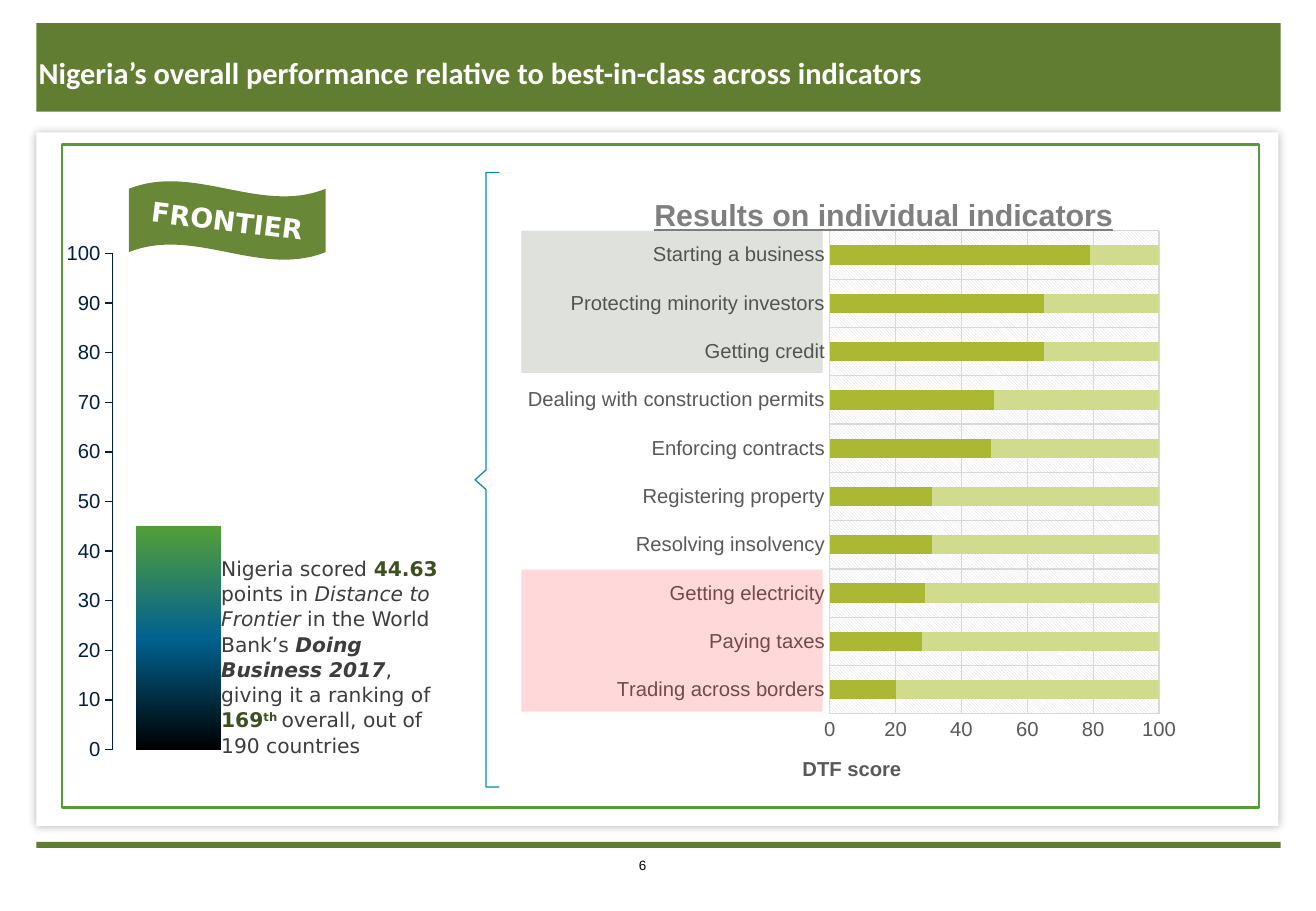
from pptx import Presentation
from pptx.chart.data import CategoryChartData
from pptx.dml.color import RGBColor
from pptx.enum.chart import XL_CHART_TYPE, XL_TICK_MARK
from pptx.enum.shapes import MSO_SHAPE
from pptx.enum.text import MSO_ANCHOR, PP_ALIGN
from pptx.oxml import parse_xml
from pptx.oxml.ns import nsdecls, qn
from pptx.util import Inches, Pt

# Content
TITLE = "Nigeria’s overall performance relative to best-in-class across indicators"
CHART_TITLE = "Results on individual indicators"
SCORE = 45
INDICATORS = [
    ("Trading across borders", 20), ("Paying taxes", 28),
    ("Getting electricity", 29), ("Resolving insolvency", 31),
    ("Registering property", 31), ("Enforcing contracts", 49),
    ("Dealing with construction permits", 50), ("Getting credit", 65),
    ("Protecting minority investors", 65), ("Starting a business", 79),
]
# Text, style: b bold, i italic, g dark green, s superscript
NOTE = [
    ("Nigeria scored ", ""), ("44.63", "bg"), (" points in ", ""),
    ("Distance to Frontier", "i"), (" in the World Bank’s ", ""),
    ("Doing Business 2017", "bi"), (", giving it a ranking of ", ""),
    ("169", "bg"), ("th ", "bgs"), ("overall, out of 190 countries", ""),
]
COLORS = {
    "band": "617D32", "white": "FFFFFF", "frame": "549E39", "flag": "698837",
    "navy": "021F43", "note": "3D3D3D", "strong": "3E5020", "grid": "D9D9D9",
    "label": "595959", "heading": "7F7F7F", "score": "AAB833", "rest": "D1DB8D",
    "best": "2E3C18", "worst": "FF0000", "brace": "0989B1", "mid": "01628F",
    "black": "000000", "shadow": "404040",
}
BRACE = [(4.11, 6.48), (4, 6.48), (4, 4.03), (3.91, 3.95),
         (4, 3.87), (4, 1.42), (4.11, 1.42)]


def rgb(name):
    return RGBColor.from_string(COLORS[name])


def style(font, size, color, name="Arial", bold=False):
    font.size, font.name, font.bold = Pt(size), name, bold
    font.color.rgb = rgb(color)


def xml(tag, body):
    return parse_xml(f"<{tag} {nsdecls('a', 'c')}>{body}</{tag}>")


def clr(name, alpha=100):
    return f'<a:srgbClr val="{COLORS[name]}"><a:alpha val="{alpha * 1000}"/></a:srgbClr>'


def add_box(x, y, w, h, fill, line=None, shape=MSO_SHAPE.RECTANGLE):
    sp = s.shapes.add_shape(shape, Inches(x), Inches(y), Inches(w), Inches(h))
    sp.shadow.inherit = False
    sp.fill.solid()
    sp.fill.fore_color.rgb = rgb(fill)
    if line:
        sp.line.color.rgb = rgb(line)
        sp.line.width = Pt(1.5)
    else:
        sp.line.fill.background()
    return sp


def add_text(x, y, w, h, runs, size, color, name, wrap=True):
    tf = s.shapes.add_textbox(Inches(x), Inches(y), Inches(w), Inches(h)).text_frame
    tf.word_wrap = wrap
    for text, marks in runs:
        r = tf.paragraphs[0].add_run()
        r.text = text
        style(r.font, size, "strong" if "g" in marks else color, name, "b" in marks)
        r.font.italic = "i" in marks
        if "s" in marks:
            r.font._element.set("baseline", "30000")
    return tf


def layout(x, y, w=None, h=None):
    target = '<c:layoutTarget val="inner"/>' if w else ""
    size = f'<c:w val="{w}"/><c:h val="{h}"/>' if w else ""
    return xml("c:layout", f'<c:manualLayout>{target}<c:xMode val="edge"/><c:yMode val="edge"/>'
                           f'<c:x val="{x}"/><c:y val="{y}"/>{size}</c:manualLayout>')


def add_stack(kind, at, names, values, gap, plot_at):
    data = CategoryChartData()
    data.categories = names
    data.add_series("Series 1", values)
    data.add_series("Series 2", [100 - v for v in values])
    chart = s.shapes.add_chart(kind, *map(Inches, at), data).chart
    chart.has_legend = chart.has_title = False
    plot = chart.plots[0]
    plot.gap_width, plot.overlap, plot.vary_by_categories = gap, 100, False
    area = chart._chartSpace.chart.plotArea
    for old in area.findall(qn("c:layout")):
        area.remove(old)
    area.insert(0, layout(*plot_at))
    chart.value_axis.minimum_scale, chart.value_axis.maximum_scale = 0, 100
    return chart, area


def style_axis(axis, color, line, tick):
    style(axis.tick_labels.font, 12, color)
    axis.format.line.color.rgb = rgb(line)
    axis.format.line.width = Pt(0.75)
    axis.major_tick_mark, axis.minor_tick_mark = tick, XL_TICK_MARK.NONE


prs = Presentation()
prs.slide_width, prs.slide_height = Inches(10.83), Inches(7.5)
s = prs.slides.add_slide(prs.slide_layouts[6])

# Page bands, panel and frame
add_box(0.3, 6.93, 10.24, 0.05, "band")
add_box(0.3, 0.19, 10.24, 0.73, "band")
panel = add_box(0.3, 1.09, 10.22, 5.71, "white")
panel._element.spPr.find(qn("a:effectLst")).append(parse_xml(
    f'<a:outerShdw {nsdecls("a")} blurRad="{Pt(5)}" dist="{Pt(1)}" dir="5400000">'
    f'{clr("shadow", 40)}</a:outerShdw>'))
add_text(5.16, 7.01, 0.34, 0.24, [("6", "")], 8, "black", "Arial", wrap=False)
add_box(0.51, 1.19, 9.85, 5.46, "white", "frame")

# Overall score column
chart, area = add_stack(XL_CHART_TYPE.COLUMN_STACKED, (0.53, 1.91, 1.52, 4.44),
                        ["1"], [SCORE], 56, (0.26, 0.04, 0.72, 0.92))
style(chart.font, 10, "navy", "Roboto")
chart.category_axis.visible = False
chart.value_axis.has_major_gridlines = False
chart.value_axis.major_unit = 10
style_axis(chart.value_axis, "navy", "navy", XL_TICK_MARK.OUTSIDE)
score, rest = chart.plots[0].series
stops = "".join(f'<a:gs pos="{pos * 1000}">{clr(name)}</a:gs>'
                for pos, name in [(0, "frame"), (50, "mid"), (100, "black")])
score._element.get_or_add_spPr().append(xml(
    "a:gradFill", f'<a:gsLst>{stops}</a:gsLst><a:lin ang="5400000" scaled="0"/>'))
rest.format.fill.background()

# Frontier flag
flag = add_box(1.06, 1.49, 1.62, 0.65, "flag", shape=MSO_SHAPE.WAVE)
flag.adjustments[0], flag.adjustments[1] = 0.099, 0
tf = flag.text_frame
tf.text = "FRONTIER"
tf.vertical_anchor = MSO_ANCHOR.MIDDLE
tf._txBody.bodyPr.set("rot", "420000")
p = tf.paragraphs[0]
p.alignment = PP_ALIGN.CENTER
style(p.runs[0].font, 16, "white", "DejaVu Sans", True)

# Score note
tf = add_text(1.82, 4.57, 1.81, 1.62, NOTE, 12, "note", "DejaVu Sans")
tf.margin_left = tf.margin_right = tf.margin_top = tf.margin_bottom = 0
tf.paragraphs[0].line_spacing = 1.04

# Indicator bars
names, values = zip(*INDICATORS)
chart, area = add_stack(XL_CHART_TYPE.BAR_STACKED, (4.09, 1.42, 5.73, 5.06),
                        names, values, 150, (0.478, 0.095, 0.473, 0.786))
style(chart.font, 10, "black")
for axis in (chart.category_axis, chart.value_axis):
    style_axis(axis, "label", "grid", XL_TICK_MARK.NONE)
    axis.has_major_gridlines = True
    axis.major_gridlines.format.line.color.rgb = rgb("grid")
    axis.major_gridlines.format.line.width = Pt(0.75)
chart.value_axis.major_unit = 20
chart.value_axis.tick_labels.number_format = "0"
chart.value_axis.tick_labels.number_format_is_linked = False
for series, color in zip(chart.plots[0].series, ("score", "rest")):
    series.format.fill.solid()
    series.format.fill.fore_color.rgb = rgb(color)
for titled, text, size, color in ((chart, CHART_TITLE, 18, "heading"),
                                  (chart.value_axis, "DTF score", 12, "label")):
    title = titled.chart_title if titled is chart else titled.axis_title
    title.text_frame.text = text
    font = title.text_frame.paragraphs[0].runs[0].font
    style(font, size, color, bold=True)
    font.underline = titled is chart
title = chart.chart_title._element
for old in title.findall(qn("c:layout")):
    title.remove(old)
title.find(qn("c:tx")).addnext(layout(0.218, 0.028))
area.append(xml("c:spPr", f'<a:pattFill prst="ltDnDiag"><a:fgClr>{clr("grid")}</a:fgClr>'
                          f'<a:bgClr>{clr("white")}</a:bgClr></a:pattFill>'))
chart._chartSpace.chart.addnext(xml(
    "c:spPr", f'<a:solidFill>{clr("white")}</a:solidFill><a:ln><a:noFill/></a:ln>'))

# Best and worst groups
for y, color in ((1.9, "best"), (4.69, "worst")):
    tint = add_box(4.29, y, 2.48, 1.17, color)
    fill = tint._element.spPr.find(qn("a:solidFill"))
    fill[0].append(xml("a:alpha", ""))
    fill[0][0].set("val", "15000")

# Brace
points = [(Inches(x), Inches(y)) for x, y in BRACE]
builder = s.shapes.build_freeform(*points[0])
builder.add_line_segments(points[1:], close=False)
brace = builder.convert_to_shape()
brace.shadow.inherit = False
brace.fill.background()
brace.line.color.rgb = rgb("brace")
brace.line.width = Pt(0.75)

# Slide title
tf = add_text(0.22, 0.4, 9.43, 0.4, [(TITLE, "b")], 18, "white", "Calibri")
tf.vertical_anchor = MSO_ANCHOR.MIDDLE

prs.save("out.pptx")
